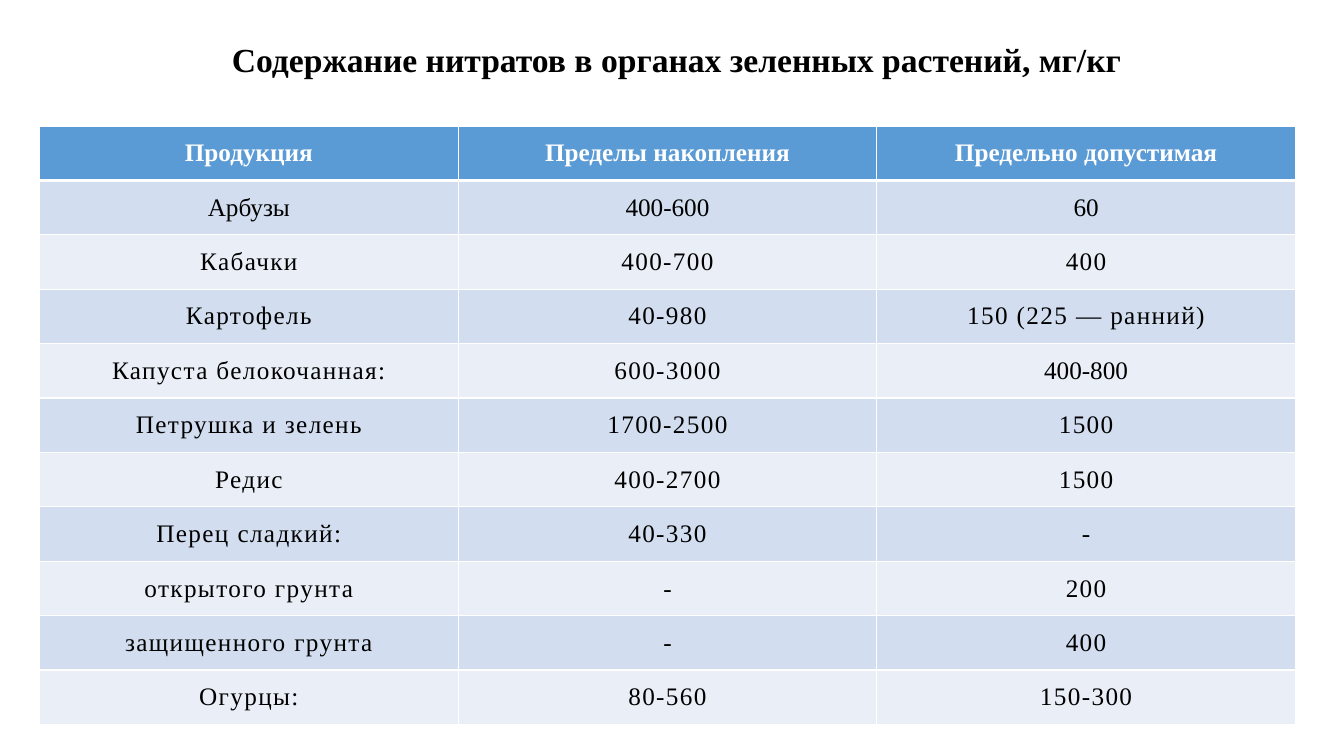
"""Builds a slide with a table of nitrate content in vegetables."""
from dataclasses import dataclass

from lxml import etree
from pptx import Presentation
from pptx.dml.color import RGBColor
from pptx.enum.text import MSO_ANCHOR, PP_ALIGN
from pptx.oxml.ns import qn
from pptx.util import Pt

MIDDLE = MSO_ANCHOR.MIDDLE
CENTER = PP_ALIGN.CENTER

TITLE = "Содержание нитратов в органах зеленных растений, мг/кг"
ROWS = [
    ("Продукция", "Пределы накопления", "Предельно допустимая"),
    ("Арбузы", "400-600", "60"),
    ("Кабачки", "400-700", "400"),
    ("Картофель", "40-980", "150 (225 — ранний)"),
    ("Капуста белокочанная:", "600-3000", "400-800"),
    ("Петрушка и зелень", "1700-2500", "1500"),
    ("Редис", "400-2700", "1500"),
    ("Перец сладкий:", "40-330", "-"),
    ("открытого грунта", "-", "200"),
    ("защищенного грунта", "-", "400"),
    ("Огурцы:", "80-560", "150-300"),
]
UNSPACED_ROWS = 2
UNSPACED_TEXTS = ("-", "400-800")


@dataclass
class Theme:
    """Fonts, type sizes, colours and line widths of the slide."""
    font: str = "Times New Roman"
    title_size: float = 24
    cell_size: float = 18
    ink: str = "000000"
    white: str = "FFFFFF"
    header: str = "5B9BD5"
    bands: tuple = ("EAEFF7", "D2DEEF")
    rule: float = 1
    header_rule: float = 3
    tracking: float = 1


class SlideBuilder:
    """Holds the theme and the current slide."""

    def __init__(self, prs, theme):
        """Add a blank slide to the presentation."""
        self.theme = theme
        self.s = prs.slides.add_slide(prs.slide_layouts[6])

    def text(self, tf, text, size, color, bold=False, spacing=0, line=1.0):
        """Put one centred paragraph into a text frame."""
        p = tf.paragraphs[0]
        p.alignment, p.line_spacing = CENTER, line
        r = p.add_run()
        r.text = text
        formats = {"name": self.theme.font, "size": Pt(size), "bold": bold}
        for key, value in formats.items():
            setattr(r.font, key, value)
        r.font.color.rgb = RGBColor.from_string(color)
        if spacing:
            r._r.get_or_add_rPr().set("spc", str(int(spacing * 100)))

    def title(self, text, left, top, width, height):
        """Add the slide heading."""
        sp = self.s.shapes.add_textbox(Pt(left), Pt(top), Pt(width), Pt(height))
        tf = sp.text_frame
        tf.word_wrap, tf.vertical_anchor = True, MIDDLE
        self.text(tf, text, self.theme.title_size, self.theme.ink, True, line=0.9)

    def borders(self, cell, row):
        """Draw the four cell edges, thicker under the header."""
        t = self.theme
        widths = {"a:lnL": t.rule, "a:lnR": t.rule,
                  "a:lnT": t.header_rule if row == 1 else t.rule,
                  "a:lnB": t.header_rule if row == 0 else t.rule}
        tc_pr = cell._tc.get_or_add_tcPr()
        for i, (tag, width) in enumerate(widths.items()):
            ln = etree.Element(qn(tag), w=str(Pt(width)))
            fill = etree.SubElement(ln, qn("a:solidFill"))
            etree.SubElement(fill, qn("a:srgbClr"), val=t.white)
            tc_pr.insert(i, ln)

    def cell(self, cell, text, row):
        """Fill, frame and label one table cell."""
        t, header = self.theme, row == 0
        formats = {"vertical_anchor": MIDDLE, "margin_left": Pt(2.16),
                   "margin_right": Pt(2.16), "margin_top": 0, "margin_bottom": 0}
        for key, value in formats.items():
            setattr(cell, key, value)
        cell.fill.solid()
        color = t.header if header else t.bands[row % 2]
        cell.fill.fore_color.rgb = RGBColor.from_string(color)
        self.borders(cell, row)
        plain = row < UNSPACED_ROWS or text in UNSPACED_TEXTS
        self.text(cell.text_frame, text, t.cell_size, t.white if header else t.ink,
                  header, 0 if plain else t.tracking)

    def table(self, rows, left, top, col_width, row_height):
        """Add a table of equal columns and rows."""
        n, m = len(rows), len(rows[0])
        table = self.s.shapes.add_table(n, m, Pt(left), Pt(top), Pt(m * col_width),
                                        Pt(n * row_height)).table
        for column in table.columns:
            column.width = Pt(col_width)
        for i, texts in enumerate(rows):
            table.rows[i].height = Pt(row_height)
            for j, text in enumerate(texts):
                self.cell(table.cell(i, j), text, i)


def main():
    """Build and save the presentation."""
    prs = Presentation()
    prs.slide_width, prs.slide_height = Pt(960), Pt(540)
    slide = SlideBuilder(prs, Theme())
    slide.title(TITLE, 27.5, 18.7, 911.5, 50.4)
    slide.table(ROWS, 28.3, 90, 299, 38.88)
    prs.save("out.pptx")


if __name__ == "__main__":
    main()
